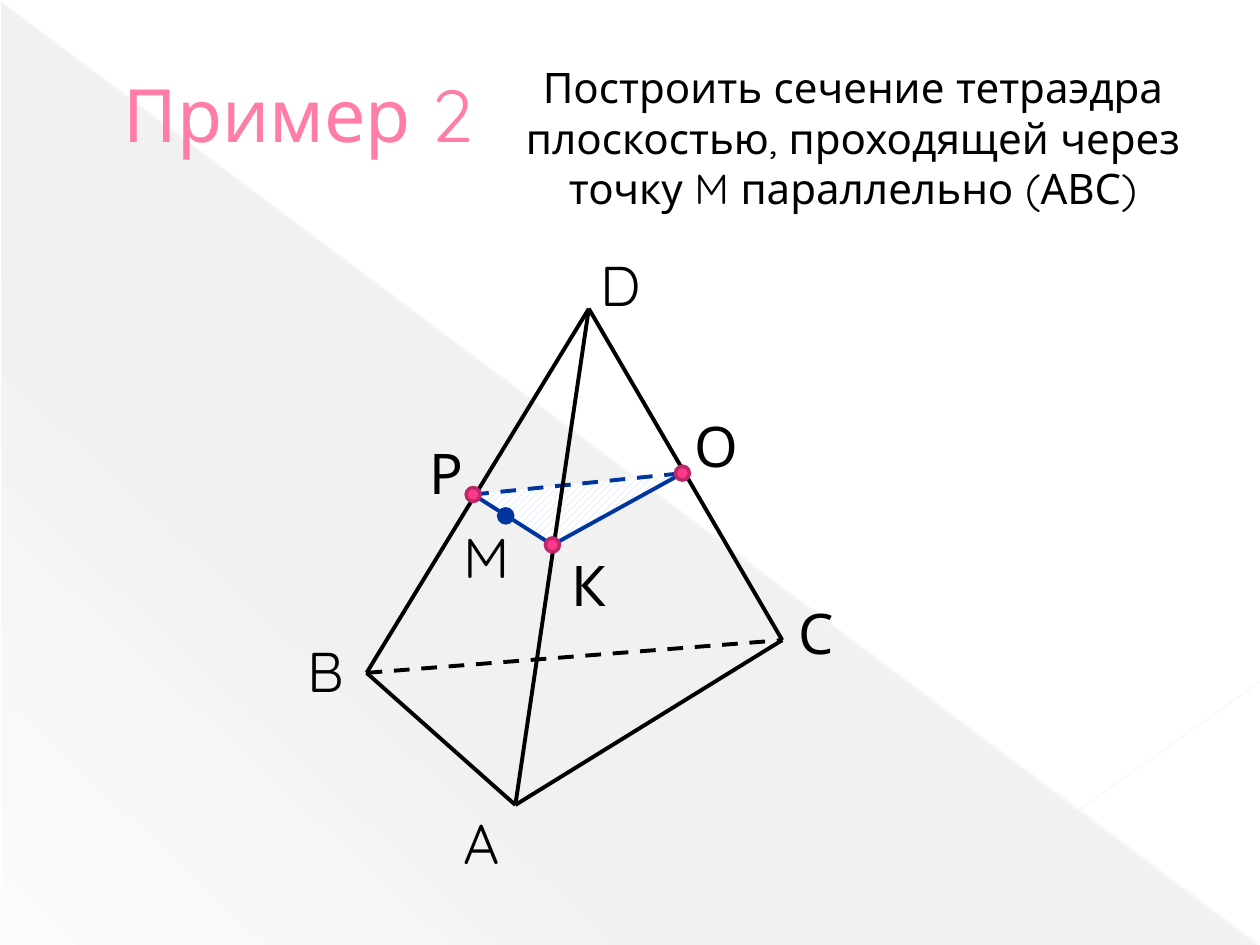
import pptx
import pptx.util
import pptx.dml.color
import pptx.enum.dml
import pptx.enum.shapes
import pptx.enum.text
import pptx.oxml
import pptx.oxml.ns

Pt = pptx.util.Pt
KIND = pptx.enum.shapes.MSO_SHAPE
STRAIGHT = pptx.enum.shapes.MSO_CONNECTOR.STRAIGHT
DASH = pptx.enum.dml.MSO_LINE.DASH
ALIGN = pptx.enum.text.PP_ALIGN
ANCHOR = pptx.enum.text.MSO_ANCHOR
NS = pptx.oxml.ns.nsdecls("a")


def color(code):
    return pptx.dml.color.RGBColor.from_string(code)


def write(box, text, size, code, align, form):
    """Fill a text frame and style its only paragraph."""
    frame = box.text_frame
    frame.text = text
    for name, value in form.items():
        setattr(frame, name, value)
    par = frame.paragraphs[0]
    par.alignment = align
    for name, value in {"name": "Quicksand", "size": Pt(size)}.items():
        setattr(par.font, name, value)
    par.font.color.rgb = color(code)


deck = pptx.Presentation()
deck.slide_width, deck.slide_height = Pt(720), Pt(540)
slide = deck.slides.add_slide(deck.slide_layouts[5])
shapes = slide.shapes

# Backdrop: translucent grey triangle
back = shapes.add_shape(KIND.RIGHT_TRIANGLE, Pt(0.7), Pt(1.4), Pt(718.6), Pt(538.6))
back.shadow.inherit = False
back.line.fill.background()
stops = "".join(
    f'<a:gs pos="{pos * 1000}"><a:srgbClr val="666666"><a:alpha val="{alpha * 1000}"/></a:srgbClr></a:gs>'
    for pos, alpha in [(0, 10), (70, 8), (100, 1)])
grad = pptx.oxml.parse_xml(
    f'<a:gradFill {NS} rotWithShape="1"><a:gsLst>{stops}</a:gsLst>'
    f'<a:lin ang="{133 * 60000}" scaled="0"/></a:gradFill>')
back._element.spPr.find(pptx.oxml.ns.qn("a:prstGeom")).addnext(grad)

# Corners of the tetrahedron and of the section
spot = {
    "A": (294.5, 460), "B": (209.5, 384.5), "C": (447, 365.8), "D": (336.5, 176.4),
    "P": (270.4, 282.6), "K": (315.7, 311.4), "O": (390, 270.4), "M": (289, 294.8),
}

# Hatched section
pen = shapes.build_freeform(*map(Pt, spot["P"]), scale=1.0)
pen.add_line_segments([tuple(map(Pt, spot[key])) for key in "KO"], close=True)
cut = pen.convert_to_shape()
cut.shadow.inherit = False
cut.line.fill.background()
cut.fill.patterned()
cut.fill.pattern = pptx.enum.dml.MSO_PATTERN.WIDE_UPWARD_DIAGONAL
cut.fill.fore_color.rgb = color("B9D0FF")
cut.fill.back_color.rgb = color("FFFFFF")

# Lines: backdrop, section edges, solid edges; hidden edges are dashed
lines = [((0, 0.7), (719.3, 539.3), "E8E8E8", 0.39, 35, False),
         ((720, 389.5), (509, 539.3), "EAEAEA", 0.47, 45, False)]
for code, pairs, hidden in [("00349E", ["PK", "KO", "PO"], "PO"),
                            ("000000", ["BA", "AC", "BC", "AD", "BD", "CD"], "BC")]:
    lines += [(spot[pair[0]], spot[pair[1]], code, 2.25, 100, pair == hidden)
              for pair in pairs]
for start, end, code, width, alpha, dashed in lines:
    edge = shapes.add_connector(STRAIGHT, *map(Pt, start + end))
    edge.line.width = Pt(width)
    edge.line.color.rgb = color(code)
    if dashed:
        edge.line.dash_style = DASH
    if alpha < 100:
        tint = edge._element.spPr.find(".//" + pptx.oxml.ns.qn("a:srgbClr"))
        tint.append(pptx.oxml.parse_xml(f'<a:alpha {NS} val="{alpha * 1000}"/>'))
    edge._element.spPr.append(pptx.oxml.parse_xml(f"<a:effectLst {NS}/>"))

# Points
for key, fill, rim in [("M", "00349E", "00349E"), ("K", "FF388C", "BD2968"),
                       ("P", "FF388C", "BD2968"), ("O", "FF388C", "BD2968")]:
    x, y = spot[key]
    dot = shapes.add_shape(KIND.OVAL, Pt(x - 4), Pt(y - 4), Pt(8), Pt(8))
    dot.shadow.inherit = False
    dot.fill.solid()
    dot.fill.fore_color.rgb = color(fill)
    dot.line.color.rgb = color(rim)
    dot.line.width = Pt(2)

# Letters
for text, x, y in [("B", 168.5, 360), ("A", 257.8, 458.6), ("D", 336.2, 139.7),
                   ("M", 257.8, 295.2), ("С", 449.3, 338.4), ("Р", 238.3, 247),
                   ("К", 319.7, 311), ("О", 389.5, 231.8)]:
    box = shapes.add_textbox(Pt(x), Pt(y), Pt(32), Pt(46))
    write(box, text, 32, "000000", ALIGN.LEFT, {"word_wrap": True})

# Title, above the backdrop
title = shapes.title
place = {"left": Pt(25.2), "top": Pt(9.4), "width": Pt(669.6), "height": Pt(110.2)}
for name, value in place.items():
    setattr(title, name, value)
write(title, "Пример 2", 42, "FF7DA7", ALIGN.LEFT,
      {"vertical_anchor": ANCHOR.MIDDLE, "margin_left": Pt(45.4), "word_wrap": True})
shapes._spTree.append(title._element)

# Task
task = shapes.add_textbox(Pt(287.3), Pt(31.7), Pt(400.3), Pt(94.3))
write(task, "Построить сечение тетраэдра плоскостью, проходящей через точку M параллельно (АВС)",
      24, "000000", ALIGN.CENTER, {"word_wrap": True})

deck.save("out.pptx")
